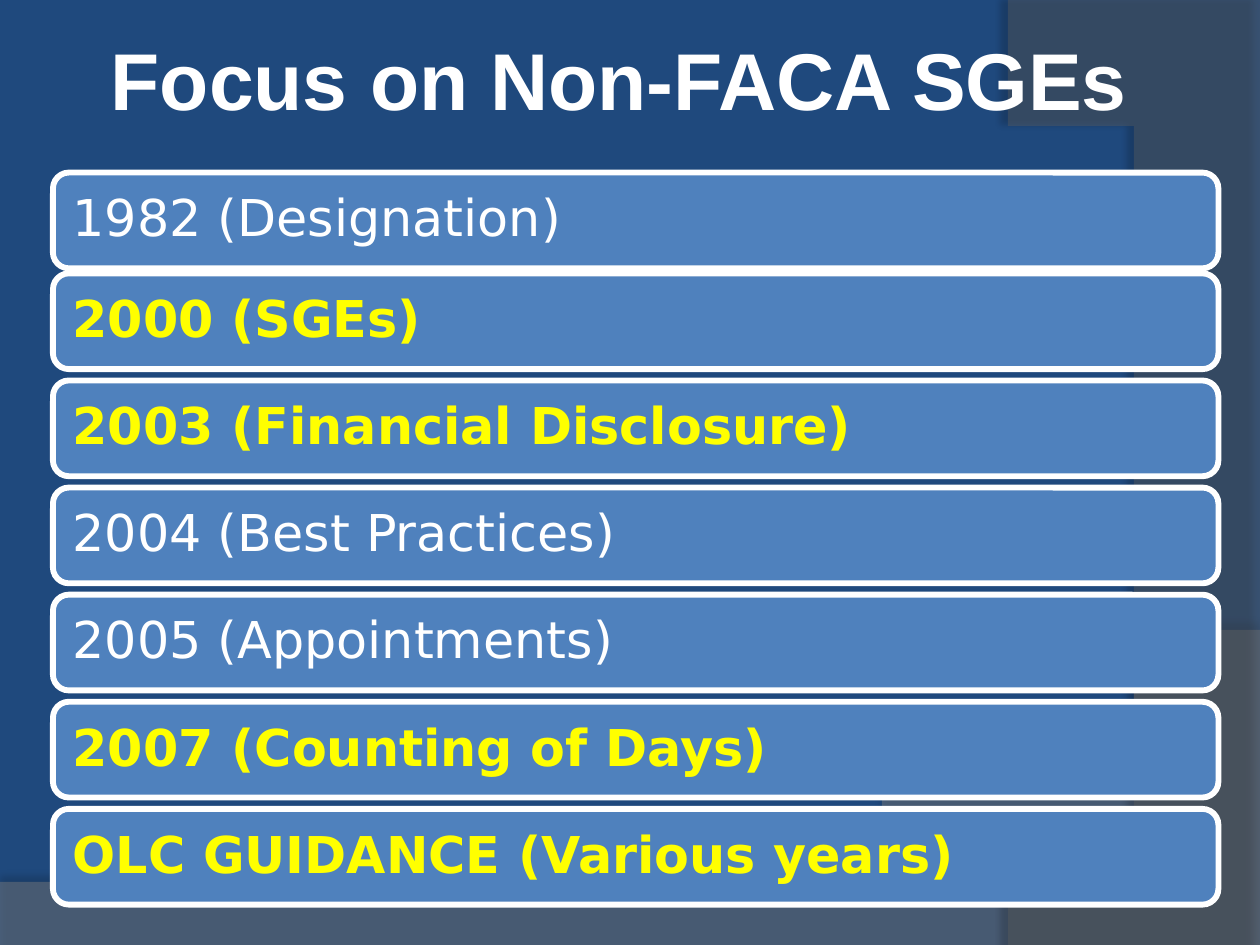
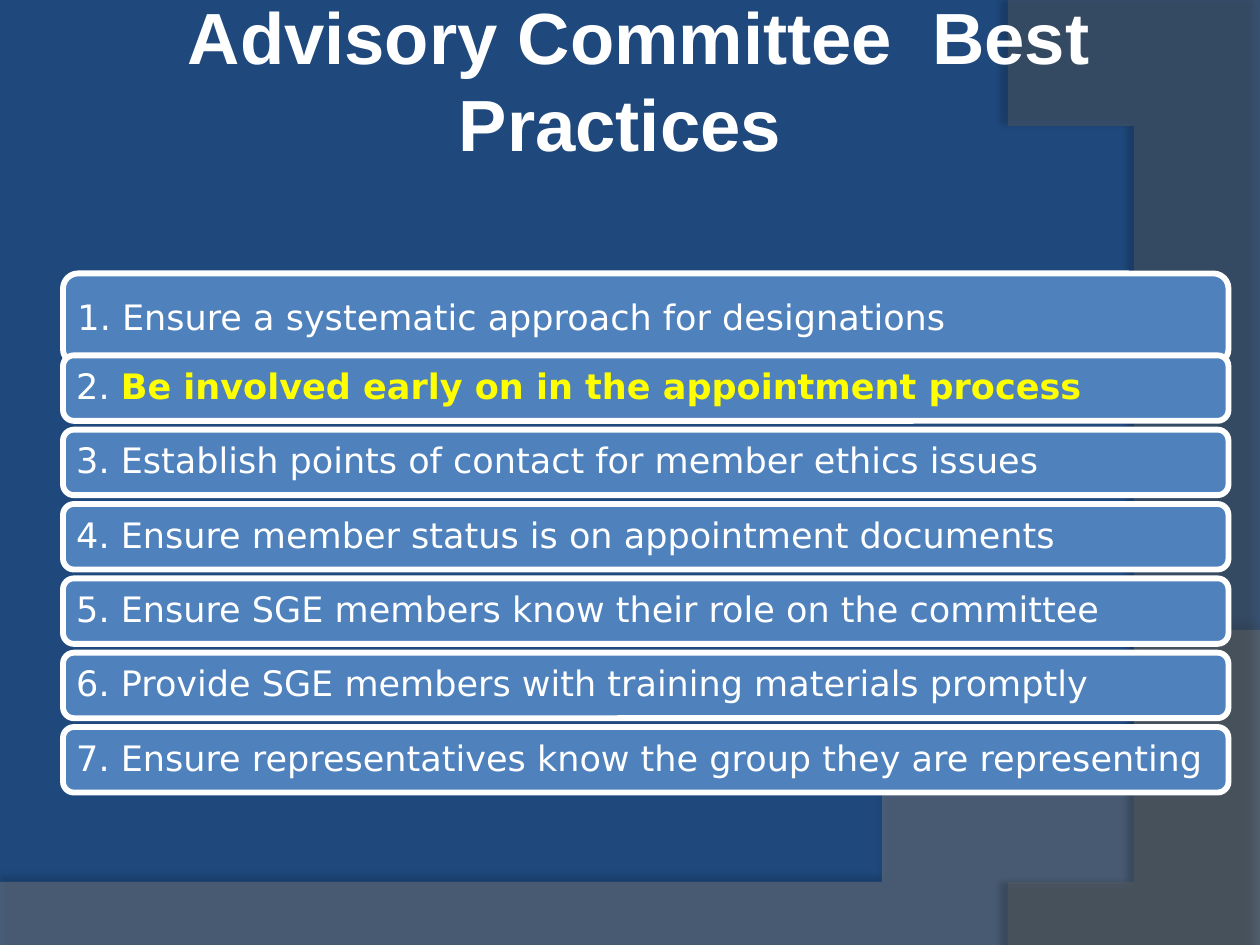
from lxml.etree import SubElement
from pptx import Presentation
from pptx.dml.color import RGBColor
from pptx.enum.shapes import MSO_SHAPE as Shape
from pptx.enum.text import MSO_ANCHOR as Anchor, PP_ALIGN as Align
from pptx.oxml.ns import qn
from pptx.util import Inches, Pt

NAVY, BLUE, WHITE, YELLOW = "1F497D", "4F81BD", "FFFFFF", "FFFF00"
STEPS = 40


def paint(target, color):
    """Give a fill a solid colour, or a font its text colour."""
    if hasattr(target, "solid"):
        target.solid()
        target.fore_color.rgb = RGBColor.from_string(color)
    else:
        target.color.rgb = RGBColor.from_string(color)


def curve(a, b, c, d):
    """Return points along a cubic curve."""
    ts = [i / STEPS for i in range(STEPS + 1)]
    return [tuple((1 - t) ** 3 * p + 3 * t * (1 - t) ** 2 * q
                  + 3 * t * t * (1 - t) * r + t ** 3 * s
                  for p, q, r, s in zip(a, b, c, d)) for t in ts]


# outline, colour, opacity %, shadow opacity %, shadow distance, shadow angle
waves = [
    ([(0, 7.5), (10, 7.5)] + curve((10, 5.2), (5.59, 7.29), (3.91, 7.19), (0, 7.05)),
     "7F7F7F", 45, 35, 3.5, 270),
    ([(10, 0.02), (10, 7.5)] + curve((8.21, 7.5), (9.35, 6.19), (10.18, 3), (8, 0)),
     "5E5E5E", 40, 45, 4, 180),
]

# Each bar is (plain text, highlighted text)
pages = [
    dict(title="Focus on Non-FACA SGEs ", size=46, left=0.42, first=(1.37, 0.76),
         top=2.17, pitch=0.85, high=0.76, font=29, inset=0.12,
         bars=[("1982 (Designation)", ""),
               ("", "2000 (SGEs)"),
               ("", "2003 (Financial Disclosure)"),
               ("2004 (Best Practices)", ""),
               ("2005 (Appointments)", ""),
               ("", "2007 (Counting of Days)"),
               ("", "OLC GUIDANCE (Various years)")]),
    dict(title=" Advisory Committee  Best Practices ", size=41.4, left=0.5, first=(2.17, 0.72),
         top=2.82, pitch=0.59, high=0.52, font=20, inset=0.08,
         bars=[("1. Ensure a systematic approach for designations", ""),
               ("2. ", "Be involved early on in the appointment process"),
               ("3. Establish points of contact for member ethics issues", ""),
               ("4. Ensure member status is on appointment documents", ""),
               ("5. Ensure SGE members know their role on the committee", ""),
               ("6. Provide SGE members with training materials promptly", ""),
               ("7. Ensure representatives know the group they are representing", "")]),
]

prs = Presentation()
prs.slide_width, prs.slide_height = Inches(10), Inches(7.5)
paint(prs.slide_master.background.fill, NAVY)

for page in pages:
    slide = prs.slides.add_slide(prs.slide_layouts[6])

    for points, color, alpha, dark, dist, angle in waves:
        pen = slide.shapes.build_freeform(*points[0], scale=Inches(1))
        pen.add_line_segments(points[1:], close=True)
        wave = pen.convert_to_shape()
        paint(wave.fill, color)
        wave.line.fill.background()
        wave.shadow.inherit = False
        props = wave._element.spPr
        tint = props.find(qn("a:solidFill")).find(qn("a:srgbClr"))
        SubElement(tint, qn("a:alpha"), val=str(alpha * 1000))
        shade = SubElement(props.find(qn("a:effectLst")), qn("a:outerShdw"),
                           blurRad=str(Pt(4)), dist=str(Pt(dist)),
                           dir=str(angle * 60000), algn="ctr", rotWithShape="0")
        black = SubElement(shade, qn("a:srgbClr"), val="000000")
        SubElement(black, qn("a:alpha"), val=str(dark * 1000))

    frame = slide.shapes.add_textbox(0, 0, prs.slide_width, Inches(1.25)).text_frame
    frame.word_wrap = True
    frame.vertical_anchor = Anchor.MIDDLE
    frame.margin_left = frame.margin_right = Inches(0.05)
    head = frame.paragraphs[0]
    head.text = page["title"]
    head.alignment = Align.CENTER
    head.font.name, head.font.size, head.font.bold = "Arial", Pt(page["size"]), True
    paint(head.font, WHITE)

    rows = [page["first"]] + [(page["top"] + i * page["pitch"], page["high"])
                              for i in range(len(page["bars"]) - 1)]
    for (top, high), texts in zip(rows, page["bars"]):
        bar = slide.shapes.add_shape(Shape.ROUNDED_RECTANGLE, Inches(page["left"]),
                                     Inches(top), Inches(9.25), Inches(high))
        bar.shadow.inherit = False
        paint(bar.fill, BLUE)
        paint(bar.line.fill, WHITE)
        bar.line.width = Pt(3.35)
        frame = bar.text_frame
        frame.word_wrap = True
        frame.vertical_anchor = Anchor.MIDDLE
        frame.margin_left = frame.margin_right = Inches(page["inset"])
        frame.margin_top = frame.margin_bottom = Inches(page["inset"])
        line = frame.paragraphs[0]
        line.alignment, line.line_spacing = Align.LEFT, 0.9
        line.font.name, line.font.size = "DejaVu Sans", Pt(page["font"])
        for text, color, bold in zip(texts, (WHITE, YELLOW), (False, True)):
            if text:
                run = line.add_run()
                run.text, run.font.bold = text, bold
                paint(run.font, color)

prs.save("out.pptx")
